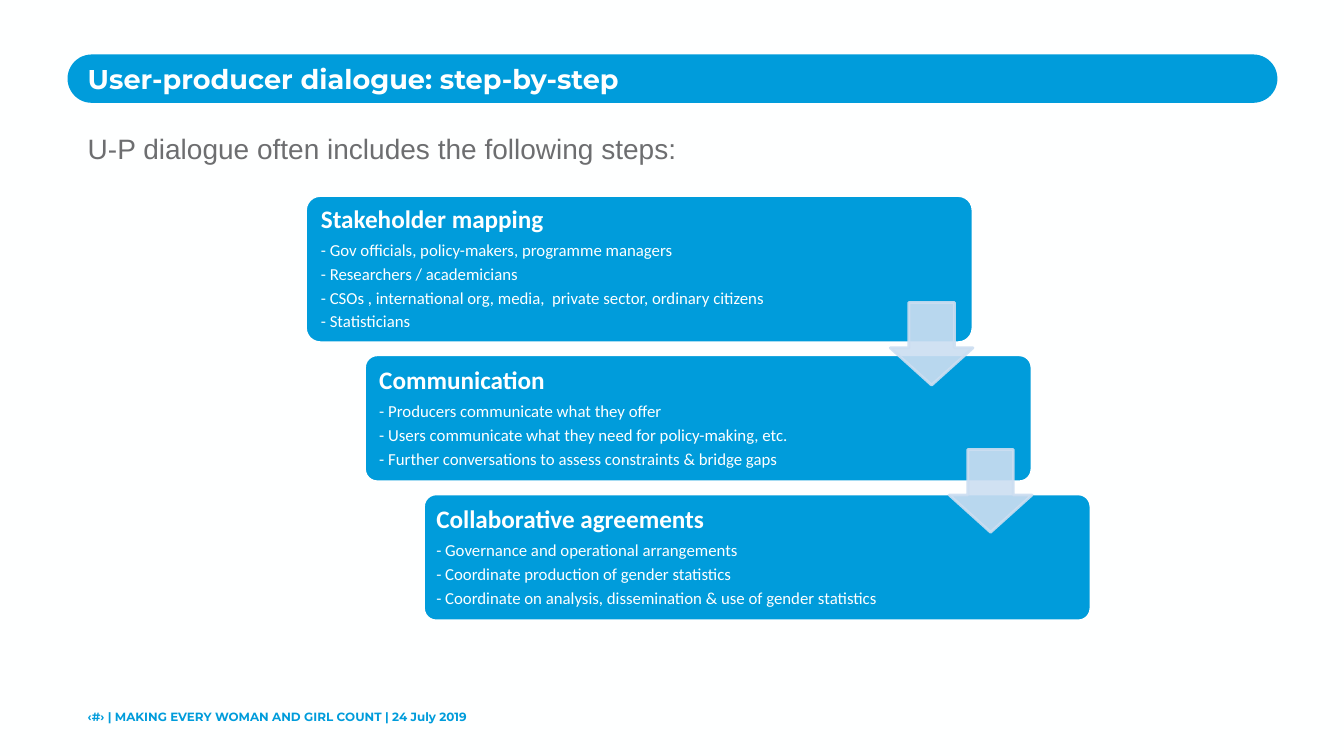
import pptx
import pptx.dml.color
import pptx.enum.shapes
import pptx.enum.text
import pptx.oxml.ns
import pptx.util
from lxml import etree

Inches, Pt = pptx.util.Inches, pptx.util.Pt
MSO_SHAPE = pptx.enum.shapes.MSO_SHAPE
ANCHOR = pptx.enum.text.MSO_ANCHOR
ALIGN = pptx.enum.text.PP_ALIGN

WHITE, BLUE, PALE, GREY = "FEFFFF", "009CDB", "CCDEF1", "6D6E70"


def rgb(hex_color):
    return pptx.dml.color.RGBColor.from_string(hex_color)


class Deck:
    """Holds the presentation, its current slide and the text style."""

    def __init__(self, width, height):
        self.prs = pptx.Presentation()
        self.prs.slide_width = Inches(width)
        self.prs.slide_height = Inches(height)
        self.s = self.prs.slides.add_slide(self.prs.slide_layouts[5])
        self.s.background.fill.solid()
        self.s.background.fill.fore_color.rgb = rgb(WHITE)

    def run(self, p, text, font, size, color, bold=False):
        r = p.add_run()
        r.text = text
        r.font.name, r.font.size, r.font.bold = font, Pt(size), bold
        r.font.color.rgb = rgb(color)

    def frame(self, sp, inset=0, anchor=ANCHOR.TOP):
        tf = sp.text_frame
        tf.word_wrap = True
        tf.vertical_anchor = anchor
        tf.margin_left = tf.margin_right = Inches(inset)
        tf.margin_top = tf.margin_bottom = 0
        return tf

    def line_of_text(self, sp, *style):
        """Writes one left-aligned line into a box without insets."""
        p = self.frame(sp).paragraphs[0]
        p.alignment = ALIGN.LEFT
        self.run(p, *style)

    def title(self, box, *style):
        sp = self.s.shapes.title
        sp.left, sp.top, sp.width, sp.height = map(Inches, box)
        self.line_of_text(sp, *style)

    def text(self, box, *style):
        self.line_of_text(self.s.shapes.add_textbox(*map(Inches, box)), *style)

    def shape(self, kind, box, adjustments, fill, line=None):
        sp = self.s.shapes.add_shape(kind, *map(Inches, box))
        sp.shadow.inherit = False
        for i, value in enumerate(adjustments):
            sp.adjustments[i] = value
        sp.fill.solid()
        sp.fill.fore_color.rgb = rgb(fill)
        if line:
            sp.line.color.rgb = rgb(line)
            sp.line.width = Pt(2)
        else:
            sp.line.fill.background()
        return sp

    def title_bar(self, box):
        sp = self.shape(MSO_SHAPE.ROUNDED_RECTANGLE, box, [0.5], BLUE)
        self.s.shapes._spTree.insert(2, sp._element)  # behind the title

    def card(self, box, inset, heading, items):
        sp = self.shape(MSO_SHAPE.ROUNDED_RECTANGLE, box, [0.1], BLUE, WHITE)
        tf = self.frame(sp, inset, ANCHOR.MIDDLE)
        for i, text in enumerate([heading, *items]):
            p = tf.paragraphs[0] if i == 0 else tf.add_paragraph()
            p.alignment = ALIGN.LEFT
            p.line_spacing = 0.9
            p.space_after = Pt(4 if i else 6)
            self.run(p, text, "Calibri", 12 if i else 18, WHITE, i == 0)

    def arrow(self, box):
        """Adds a slightly transparent down arrow."""
        sp = self.shape(MSO_SHAPE.DOWN_ARROW, box, [0.55, 0.45], PALE, PALE)
        qn = pptx.oxml.ns.qn
        for color in sp._element.spPr.iter(qn("a:srgbClr")):
            etree.SubElement(color, qn("a:alpha"), val="90000")


STEPS = [
    (1.46, 0.11, "Stakeholder mapping", [
        "- Gov officials, policy-makers, programme managers",
        "- Researchers / academicians",
        "- CSOs , international org, media,  private sector, ordinary citizens",
        "- Statisticians"]),
    (1.26, 0.11, "Communication", [
        "- Producers communicate what they offer",
        "- Users communicate what they need for policy-making, etc.",
        "- Further conversations to assess constraints & bridge gaps"]),
    (1.26, 0.09, "Collaborative agreements", [
        "- Governance and operational arrangements",
        "- Coordinate production of gender statistics",
        "- Coordinate on analysis, dissemination & use of gender statistics"]),
]
CARD_LEFT, CARD_TOP, CARD_WIDTH = 3.03, 1.94, 6.62
INDENT, GAP = 0.585, 0.12
ARROW_SIZE, ARROW_TOPS = 0.82, [3, 4.46]


def main():
    deck = Deck(13.33, 7.5)
    deck.title_bar((0.67, 0.54, 12, 0.48))
    deck.title((0.87, 0.62, 11.61, 0.33), "User-producer dialogue: step-by-step",
               "Montserrat", 19.4, WHITE, True)
    deck.text((0.87, 1.3, 11.61, 0.34),
              "U-P dialogue often includes the following steps:", "Arial", 20, GREY)
    deck.text((0.87, 7.04, 7.11, 0.14),
              "‹#› | MAKING EVERY WOMAN AND GIRL COUNT | 24 July 2019",
              "Montserrat", 8.5, BLUE, True)

    top = CARD_TOP
    for i, (height, inset, heading, items) in enumerate(STEPS):
        box = (CARD_LEFT + i * INDENT, top, CARD_WIDTH, height)
        deck.card(box, inset, heading, items)
        top += height + GAP
    for i, arrow_top in enumerate(ARROW_TOPS):
        left = CARD_LEFT + i * INDENT + CARD_WIDTH - ARROW_SIZE
        deck.arrow((left, arrow_top, ARROW_SIZE, ARROW_SIZE))
    deck.prs.save("out.pptx")


if __name__ == "__main__":
    main()
